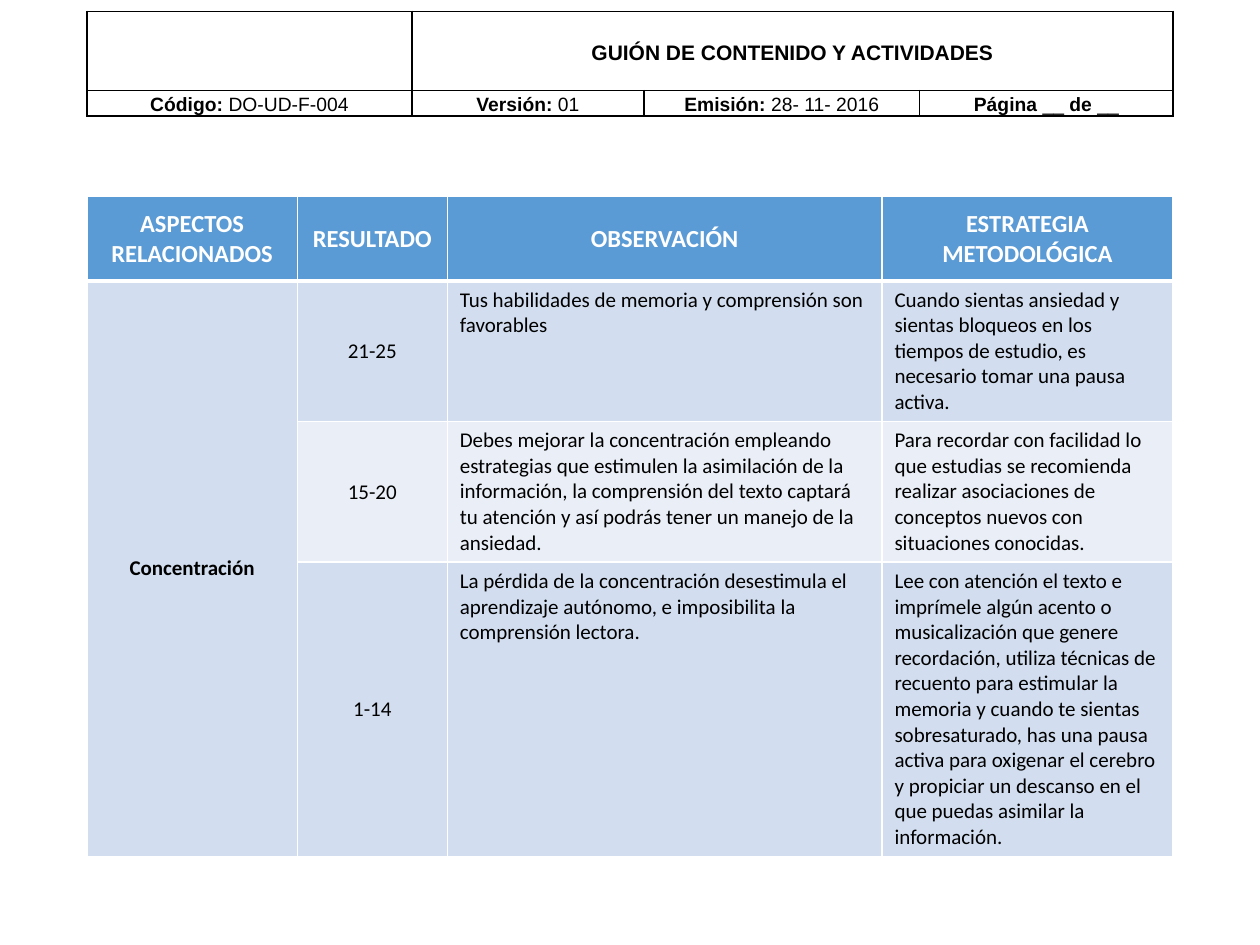
from lxml import etree
from pptx import Presentation
from pptx.dml.color import RGBColor
from pptx.enum.text import MSO_ANCHOR, PP_ALIGN
from pptx.oxml.ns import qn
from pptx.util import Inches, Pt

BLACK = RGBColor(0x00, 0x00, 0x00)
WHITE = RGBColor(0xFF, 0xFF, 0xFF)
BLUE = RGBColor(0x5B, 0x9B, 0xD5)
BAND_DARK = RGBColor(0xD2, 0xDE, 0xEF)
BAND_LIGHT = RGBColor(0xEA, 0xEF, 0xF7)

FORM_TITLE = "GUIÓN DE CONTENIDO Y ACTIVIDADES"
FORM_FIELDS = [
    [("Código: ", True), ("DO-UD-F-004", False)],
    [("Versión:", True), (" 01", False)],
    [("Emisión:", True), (" 28- 11- 2016", False)],
    [("Página ", True), ("__ ", False), ("de ", True), ("__", False)],
]
HEADINGS = ["ASPECTOS RELACIONADOS", "RESULTADO", "OBSERVACIÓN", "ESTRATEGIA METODOLÓGICA"]
ASPECT = "Concentración"
RESULTS = [
    ("21-25",
     "Tus habilidades de memoria y comprensión son favorables",
     "Cuando sientas ansiedad y sientas bloqueos en los tiempos de estudio, es necesario "
     "tomar una pausa activa."),
    ("15-20",
     "Debes mejorar la concentración empleando estrategias que estimulen la asimilación de la "
     "información, la comprensión del texto captará tu atención y así podrás tener un manejo "
     "de la ansiedad.",
     "Para recordar con facilidad lo que estudias se recomienda realizar asociaciones de "
     "conceptos nuevos con situaciones conocidas."),
    ("1-14",
     "La pérdida de la concentración desestimula el aprendizaje autónomo, e imposibilita la "
     "comprensión lectora.",
     "Lee con atención el texto e imprímele algún acento o musicalización que genere "
     "recordación, utiliza técnicas de recuento para estimular la memoria y cuando te sientas "
     "sobresaturado, has una pausa activa para oxigenar el cerebro y propiciar un descanso en "
     "el que puedas asimilar la información."),
]


def set_borders(cell, color, bottom=1):
    """Draw one-point borders round a cell, with a chosen bottom width."""
    properties = cell._tc.get_or_add_tcPr()
    for side, width in (("L", 1), ("R", 1), ("T", 1), ("B", bottom)):
        line = etree.SubElement(properties, qn(f"a:ln{side}"), w=str(Pt(width)))
        fill = etree.SubElement(line, qn("a:solidFill"))
        etree.SubElement(fill, qn("a:srgbClr"), val=str(color))


def add_grid(page, left, top, widths, heights):
    """Add an unstyled table with the given column widths and row heights in inches."""
    frame = page.shapes.add_table(
        len(heights), len(widths), Inches(left), Inches(top),
        Inches(sum(widths)), Inches(sum(heights)))
    table = frame.table
    table.first_row = table.horz_banding = False
    for column, width in zip(table.columns, widths):
        column.width = Inches(width)
    for row, height in zip(table.rows, heights):
        row.height = Inches(height)
    return table


def write_cell(cell, spans, font, size, color, centred=True):
    """Write (text, bold) spans in a cell and return the paragraph."""
    para = cell.text_frame.paragraphs[0]
    para.font.name, para.font.size = font, Pt(size)
    para.font.color.rgb = color
    if centred:
        para.alignment = PP_ALIGN.CENTER
        cell.vertical_anchor = MSO_ANCHOR.MIDDLE
    for text, bold in spans:
        span = para.add_run()
        span.text, span.font.bold = text, bold
    return para


def add_form_header(page, left, top):
    """Place the form title with its row of document fields."""
    table = add_grid(page, left, top, [2.58, 1.84, 2.19, 2.01], [0.63, 0.2])
    for cell in table.iter_cells():
        set_borders(cell, BLACK)
        cell.fill.background()
        cell.margin_left = cell.margin_right = Inches(0.05)
        cell.margin_top = cell.margin_bottom = 0
    table.cell(0, 1).merge(table.cell(0, 3))
    title = write_cell(table.cell(0, 1), [(FORM_TITLE, True)], "Arial", 12, BLACK)
    title.line_spacing = 1.15
    for index, spans in enumerate(FORM_FIELDS):
        para = write_cell(table.cell(1, index), spans, "Arial", 11, BLACK)
        para.line_spacing = 1.15


def add_results_table(page, left, top):
    """Place the table of results, observations and strategies."""
    table = add_grid(page, left, top, [1.67, 1.19, 3.45, 2.31], [0.67, 1.1, 1.1, 2.3])
    row_fills = [BLUE, BAND_DARK, BAND_LIGHT, BAND_DARK]
    for row_index, (row, color) in enumerate(zip(table.rows, row_fills)):
        for cell in row.cells:
            set_borders(cell, WHITE, bottom=1 if row_index else 3)
            cell.fill.solid()
            cell.fill.fore_color.rgb = color
    for index, heading in enumerate(HEADINGS):
        write_cell(table.cell(0, index), [(heading, True)], "Calibri", 14, WHITE)
    table.cell(1, 0).merge(table.cell(3, 0))
    write_cell(table.cell(1, 0), [(ASPECT, True)], "Calibri", 12, BLACK)
    for row_index, texts in enumerate(RESULTS, start=1):
        for column_index, text in enumerate(texts, start=1):
            write_cell(table.cell(row_index, column_index), [(text, False)],
                       "Calibri", 12, BLACK, centred=column_index == 1)


def main():
    """Build the slide and save the deck."""
    deck = Presentation()
    deck.slide_width, deck.slide_height = Inches(10), Inches(7.5)
    page = deck.slides.add_slide(deck.slide_layouts[6])
    add_form_header(page, 0.69, 0.09)
    add_results_table(page, 0.69, 1.56)
    deck.save("out.pptx")


if __name__ == "__main__":
    main()
